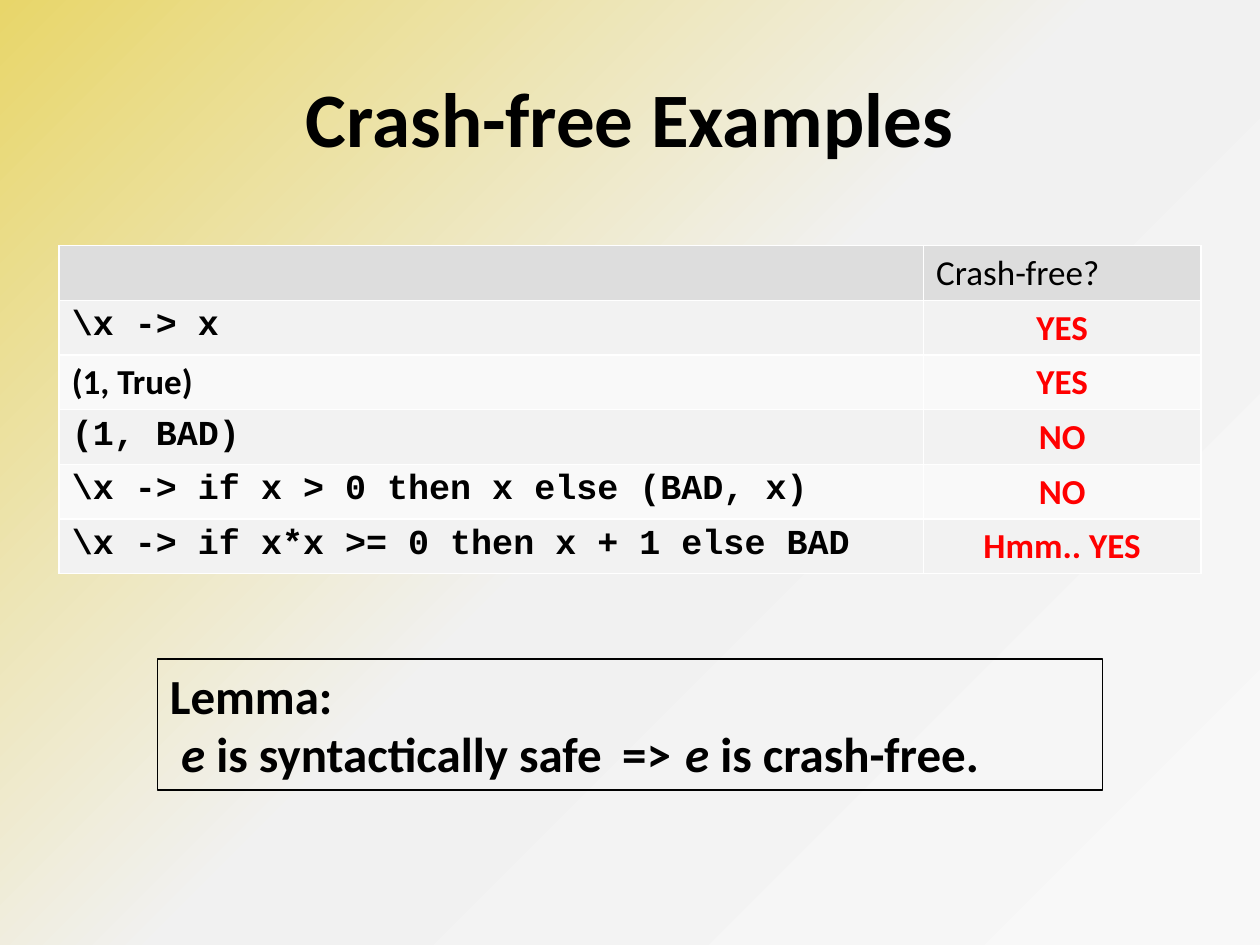
from pptx import Presentation
from pptx.dml.color import RGBColor
from pptx.enum.shapes import MSO_SHAPE
from pptx.enum.text import MSO_ANCHOR, PP_ALIGN
from pptx.oxml.ns import qn
from pptx.util import Inches, Pt
from lxml import etree

LEFT, CENTER = PP_ALIGN.LEFT, PP_ALIGN.CENTER
TOP, MIDDLE = MSO_ANCHOR.TOP, MSO_ANCHOR.MIDDLE
RECTANGLE = MSO_SHAPE.RECTANGLE
BODY_FONT, CODE_FONT = "Calibri", "Courier New"
COLORS = {
    "text": "000000", "verdict": "FF0000", "border": "FFFFFF",
    "header": "DDDDDD", "odd_row": "F2F2F2", "even_row": "F9F9F9",
    "glow": "E8D66A", "haze": "F1F1F1", "light": "F8F8F8",
}
BACKGROUND_STOPS = [(0, "glow"), (50, "haze"), (50, "haze"), (100, "light")]
EXAMPLES = [
    (r"\x -> x", CODE_FONT, "YES"),
    ("(1, True)", BODY_FONT, "YES"),
    ("(1, BAD)", CODE_FONT, "NO"),
    (r"\x -> if x > 0 then x else (BAD, x)", CODE_FONT, "NO"),
    (r"\x -> if x*x >= 0 then x + 1 else BAD", CODE_FONT, "Hmm.. YES"),
]


def rgb(color):
    return RGBColor.from_string(COLORS[color])


def add_run(paragraph, text, size, color="text", font=BODY_FONT, bold=True, italic=False):
    run = paragraph.add_run()
    run.text = text
    run.font.name = font
    run.font.size = Pt(size)
    run.font.bold = bold
    run.font.italic = italic
    run.font.color.rgb = rgb(color)


def paint_background(slide):
    fill = slide.background.fill
    fill.gradient()
    fill.gradient_angle = 315
    stops = next(slide.element.iter(qn("a:gsLst")))
    for stop in list(stops):
        stops.remove(stop)
    for percent, color in BACKGROUND_STOPS:
        stop = etree.SubElement(stops, qn("a:gs"), pos=str(percent * 1000))
        etree.SubElement(stop, qn("a:srgbClr"), val=COLORS[color])


def add_title(slide, left, top, width, height):
    frame = slide.shapes.add_textbox(left, top, width, height).text_frame
    frame.word_wrap = True
    frame.vertical_anchor = MIDDLE
    heading = frame.paragraphs[0]
    heading.alignment = CENTER
    add_run(heading, "Crash-free Examples", 44)


def set_borders(cell, width):
    properties = cell._tc.get_or_add_tcPr()
    for position, side in enumerate(("a:lnL", "a:lnR", "a:lnT", "a:lnB")):
        line = etree.Element(qn(side), w=str(width))
        solid = etree.SubElement(line, qn("a:solidFill"))
        etree.SubElement(solid, qn("a:srgbClr"), val=COLORS["border"])
        properties.insert(position, line)


def fill_cell(cell, fill, text="", align=LEFT, **style):
    cell.fill.solid()
    cell.fill.fore_color.rgb = rgb(fill)
    set_borders(cell, Pt(1))
    paragraph = cell.text_frame.paragraphs[0]
    paragraph.alignment = align
    if text:
        add_run(paragraph, text, 20, **style)


def add_examples(slide, left, top, width, height):
    row_count = len(EXAMPLES) + 1
    table = slide.shapes.add_table(row_count, 2, left, top, width, height).table
    verdict_width = Inches(2.2)
    table.columns[0].width = width - verdict_width
    table.columns[1].width = verdict_width

    fill_cell(table.cell(0, 0), "header")
    fill_cell(table.cell(0, 1), "header", "Crash-free?", bold=False)
    for row, (expression, font, verdict) in enumerate(EXAMPLES, start=1):
        band = "odd_row" if row % 2 else "even_row"
        fill_cell(table.cell(row, 0), band, expression, font=font)
        fill_cell(table.cell(row, 1), band, verdict, CENTER, color="verdict")


def add_lemma(slide, left, top, width, height):
    box = slide.shapes.add_shape(RECTANGLE, left, top, width, height)
    box.shadow.inherit = False
    box.fill.background()
    box.line.color.rgb = rgb("text")
    box.line.width = Pt(0.75)
    frame = box.text_frame
    frame.word_wrap = True
    frame.vertical_anchor = TOP

    label = frame.paragraphs[0]
    label.alignment = LEFT
    add_run(label, "Lemma:", 28)

    statement = frame.add_paragraph()
    statement.alignment = LEFT
    properties = statement._p.get_or_add_pPr()
    properties.set("marL", str(Inches(0.09)))
    properties.set("indent", "0")
    tab_stops = etree.SubElement(properties, qn("a:tabLst"))
    for position in (3.78, 4.6):
        etree.SubElement(tab_stops, qn("a:tab"), pos=str(Inches(position)), algn="l")
    for text, italic in (("e", True), (" is syntactically safe\t=>\t", False),
                         ("e", True), (" is crash-free.", False)):
        add_run(statement, text, 28, italic=italic)


def main():
    presentation = Presentation()
    presentation.slide_width = Inches(10)
    presentation.slide_height = Inches(7.5)
    slide = presentation.slides.add_slide(presentation.slide_layouts[6])
    paint_background(slide)
    add_title(slide, Inches(0.5), Inches(0.3), Inches(9), Inches(1.25))
    add_lemma(slide, Inches(1.25), Inches(5.23), Inches(7.5), Inches(1.04))
    add_examples(slide, Inches(0.47), Inches(1.95), Inches(9.06), Inches(2.6))
    presentation.save("out.pptx")


if __name__ == "__main__":
    main()
